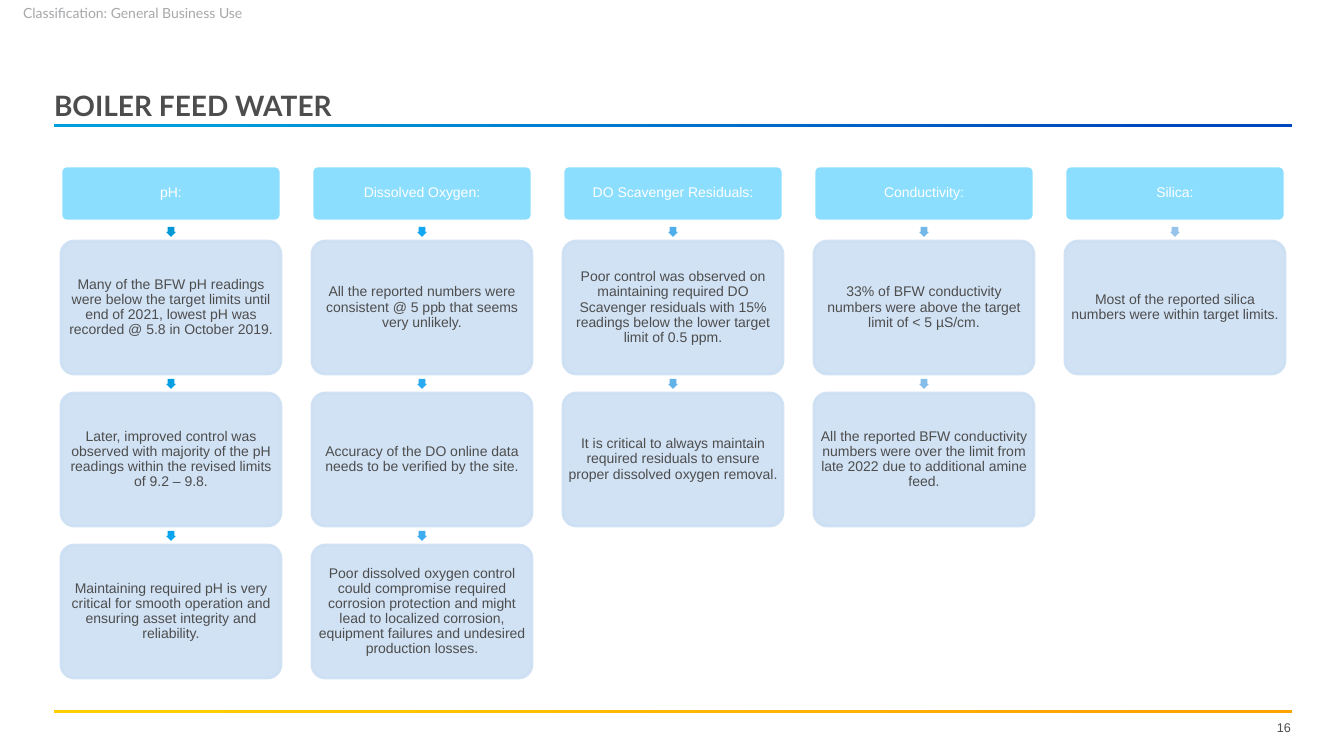
import pptx
import pptx.util
import pptx.dml.color
import pptx.enum.shapes
import pptx.enum.text
import pptx.oxml.ns
from lxml import etree

EMU_PER_PX = 914400 / 100.8
SHAPES = pptx.enum.shapes.MSO_SHAPE
ALIGN = pptx.enum.text.PP_ALIGN
ANCHOR = pptx.enum.text.MSO_ANCHOR

COLOURS = {
    "text": "4D4D4D", "muted": "A7A8AA", "white": "FFFFFF",
    "header": "8CDEFF", "card": "CCDFF3",
    "light blue": "009FDF", "dark blue": "0047BB",
    "yellow": "FFCD00", "orange": "FFA300",
}

COLUMN_LEFT, COLUMN_STEP, COLUMN_WIDTH = 61, 251, 220
HEADER_TOP, HEADER_HEIGHT = 166, 55
CARD_TOP, CARD_STEP, CARD_HEIGHT = 241, 152, 133
ARROW_SIZE, ARROW_RISE = 10, 14

# Each column: heading, then (arrow colour, finding) from top to bottom.
COLUMNS = [
    ("pH:", [
        ("0098D5", "Many of the BFW pH readings were below the target limits until "
                   "end of 2021, lowest pH was recorded @ 5.8 in October 2019."),
        ("049EE2", "Later, improved control was observed with majority of the pH "
                   "readings within the revised limits of 9.2 – 9.8."),
        ("08A5EE", "Maintaining required pH is very critical for smooth operation "
                   "and ensuring asset integrity and reliability."),
    ]),
    ("Dissolved Oxygen:", [
        ("15A8F2", "All the reported numbers were consistent @ 5 ppb that seems "
                   "very unlikely."),
        ("29A9EF", "Accuracy of the DO online data needs to be verified by the site."),
        ("3DABED", "Poor dissolved oxygen control could compromise required corrosion "
                   "protection and might lead to localized corrosion, equipment "
                   "failures and undesired production losses."),
    ]),
    ("DO Scavenger Residuals:", [
        ("50AEEB", "Poor control was observed on maintaining required DO Scavenger "
                   "residuals with 15% readings below the lower target limit of 0.5 ppm."),
        ("62B2EA", "It is critical to always maintain required residuals to ensure "
                   "proper dissolved oxygen removal."),
    ]),
    ("Conductivity:", [
        ("73B7E9", "33% of BFW conductivity numbers were above the target limit of "
                   "< 5 µS/cm."),
        ("85BDE9", "All the reported BFW conductivity numbers were over the limit "
                   "from late 2022 due to additional amine feed."),
    ]),
    ("Silica:", [
        ("95C3E9", "Most of the reported silica numbers were within target limits."),
    ]),
]


def px(length):
    return pptx.util.Emu(round(length * EMU_PER_PX))


def rgb(value):
    return pptx.dml.color.RGBColor.from_string(value)


def write(shape, text, size, colour, font="Arial", align=ALIGN.LEFT,
          anchor=ANCHOR.MIDDLE, margin=0, bold=False):
    frame = shape.text_frame
    frame.word_wrap = True
    frame.auto_size = pptx.enum.text.MSO_AUTO_SIZE.NONE
    frame.vertical_anchor = anchor
    frame.margin_left = frame.margin_right = px(margin)
    frame.margin_top = frame.margin_bottom = px(margin)
    frame.text = text
    para = frame.paragraphs[0]
    para.alignment = align
    para.font.name = font
    para.font.size = pptx.util.Pt(size)
    para.font.bold = bold
    para.font.color.rgb = rgb(COLOURS[colour])
    return para


def add_title(page, text):
    title = page.shapes.title
    title.left, title.top, title.width, title.height = px(54), px(58), px(1122), px(64)
    write(title, text, 20, "text", font="Lato", anchor=ANCHOR.BOTTOM, bold=True)


def add_label(page, left, top, width, height, *text, **style):
    box = page.shapes.add_textbox(px(left), px(top), px(width), px(height))
    write(box, *text, **style)


def add_plain_shape(page, kind, left, top, width, height):
    shape = page.shapes.add_shape(kind, px(left), px(top), px(width), px(height))
    shape.shadow.inherit = False
    shape.line.fill.background()
    return shape


def add_rule(page, top, start, end):
    """Add a thin full-width bar that blends from start to end."""
    rule = add_plain_shape(page, SHAPES.RECTANGLE, 54, top, 1238, 3)
    rule.fill.gradient()
    rule.fill.gradient_angle = 0
    stops = zip(rule.fill.gradient_stops, (0.1, 0.9), (start, end))
    for stop, position, colour in stops:
        stop.position = position
        stop.color.rgb = rgb(COLOURS[colour])


def add_panel(page, left, top, height, text, fill, line, ink, opacity=100):
    panel = add_plain_shape(page, SHAPES.ROUNDED_RECTANGLE, left, top, COLUMN_WIDTH, height)
    panel.adjustments[0] = 0.1
    panel.fill.solid()
    panel.fill.fore_color.rgb = rgb(COLOURS[fill])
    panel.line.color.rgb = rgb(COLOURS[line])
    panel.line.width = pptx.util.Pt(2)
    if opacity < 100:
        for colour in panel.element.spPr.iter(pptx.oxml.ns.qn("a:srgbClr")):
            alpha = etree.SubElement(colour, pptx.oxml.ns.qn("a:alpha"))
            alpha.set("val", str(opacity * 1000))
    para = write(panel, text, 10, ink, align=ALIGN.CENTER, margin=1)
    para.line_spacing = 0.9


def add_arrow(page, left, top, colour):
    arrow = add_plain_shape(page, SHAPES.RIGHT_ARROW, left, top, ARROW_SIZE, ARROW_SIZE)
    arrow.rotation = 90
    arrow.adjustments[0] = 0.67
    arrow.adjustments[1] = 0.5
    arrow.fill.solid()
    arrow.fill.fore_color.rgb = rgb(colour)


def add_column(page, left, heading, findings):
    add_panel(page, left, HEADER_TOP, HEADER_HEIGHT, heading, "header", "white", "white")
    arrow_left = left + (COLUMN_WIDTH - ARROW_SIZE) // 2
    for row, (arrow_colour, finding) in enumerate(findings):
        top = CARD_TOP + row * CARD_STEP
        add_arrow(page, arrow_left, top - ARROW_RISE, arrow_colour)
        add_panel(page, left, top, CARD_HEIGHT, finding, "card", "card", "text", opacity=90)


def main():
    deck = pptx.Presentation()
    deck.slide_width, deck.slide_height = px(1344), px(756)
    page = deck.slides.add_slide(deck.slide_layouts.get_by_name("Title Only"))
    add_label(page, 1205, 718, 86, 19, "16", 9, "text", align=ALIGN.RIGHT)
    add_rule(page, 710, "yellow", "orange")
    add_rule(page, 124, "light blue", "dark blue")
    add_label(page, 23, 0, 246, 26, "Classification: General Business Use", 10, "muted",
              font="Lato")
    add_title(page, "BOILER FEED WATER")
    for index, (heading, findings) in enumerate(COLUMNS):
        add_column(page, COLUMN_LEFT + index * COLUMN_STEP, heading, findings)
    deck.save("out.pptx")


if __name__ == "__main__":
    main()
